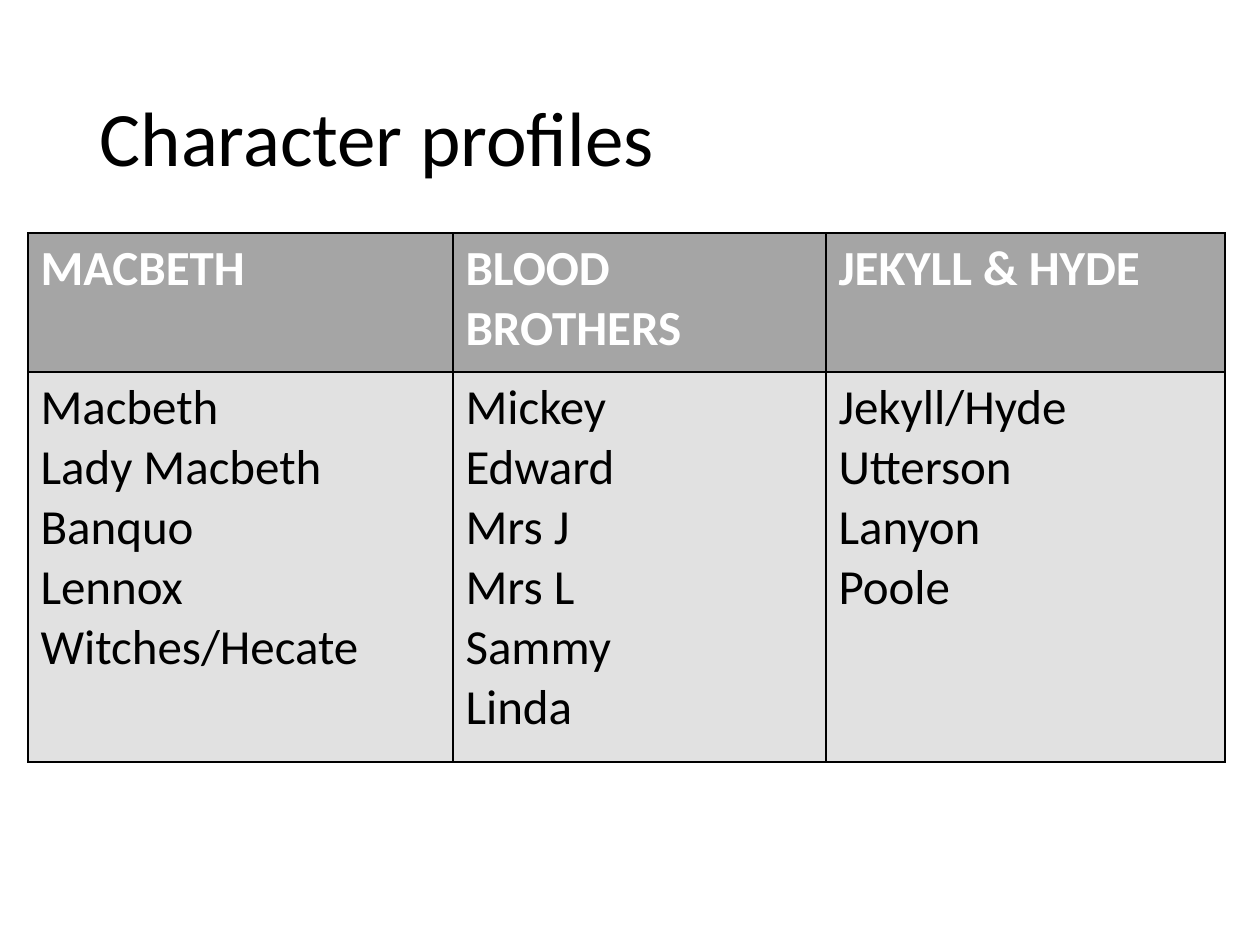
"""Build the character profiles slide."""
from dataclasses import dataclass

from lxml import etree
from pptx import Presentation
from pptx.dml.color import RGBColor
from pptx.enum.text import MSO_ANCHOR, PP_ALIGN
from pptx.oxml.ns import qn
from pptx.util import Pt

MIDDLE = MSO_ANCHOR.MIDDLE
LEFT = PP_ALIGN.LEFT


@dataclass(frozen=True)
class Theme:
    font: str = "Calibri"
    title_size: int = 44
    cell_size: int = 28
    ink: str = "000000"
    header_ink: str = "FFFFFF"
    header_fill: str = "A5A5A5"
    body_fill: str = "E1E1E1"
    border_width: int = 1


THEME = Theme()
PROFILES = {
    "MACBETH": ["Macbeth", "Lady Macbeth", "Banquo", "Lennox", "Witches/Hecate"],
    "BLOOD BROTHERS": ["Mickey", "Edward", "Mrs J", "Mrs L", "Sammy", "Linda"],
    "JEKYLL & HYDE": ["Jekyll/Hyde", "Utterson", "Lanyon", "Poole"],
}
COL_WIDTHS = [425, 373, 399]
ROW_HEIGHTS = [139, 390]


def px(n):
    return round(n * 914400 / 126)


def fill_cell(cell, lines, fill, ink, bold):
    cell.fill.solid()
    cell.fill.fore_color.rgb = RGBColor.from_string(fill)
    tf = cell.text_frame
    tf.text = "\n".join(lines)
    for p in tf.paragraphs:
        p.font.name = THEME.font
        p.font.size = Pt(THEME.cell_size)
        p.font.bold = bold
        p.font.color.rgb = RGBColor.from_string(ink)
    tc_pr = cell._tc.get_or_add_tcPr()
    for i, side in enumerate(("a:lnL", "a:lnR", "a:lnT", "a:lnB")):
        ln = etree.Element(qn(side), w=str(Pt(THEME.border_width)))
        solid = etree.SubElement(ln, qn("a:solidFill"))
        etree.SubElement(solid, qn("a:srgbClr"), val=THEME.ink)
        tc_pr.insert(i, ln)


prs = Presentation()
prs.slide_width, prs.slide_height = px(1260), px(945)
s = prs.slides.add_slide(prs.slide_layouts[5])

title = s.shapes.title
title.left, title.top, title.width, title.height = px(87), px(50), px(1086), px(183)
tf = title.text_frame
tf.text = "Character profiles"
tf.vertical_anchor = MIDDLE
p = tf.paragraphs[0]
p.alignment = LEFT
p.line_spacing = 0.9
p.font.name = THEME.font
p.font.size = Pt(THEME.title_size)
p.font.color.rgb = RGBColor.from_string(THEME.ink)

table = s.shapes.add_table(
    len(ROW_HEIGHTS), len(COL_WIDTHS),
    px(28), px(233), px(sum(COL_WIDTHS)), px(sum(ROW_HEIGHTS)),
).table
for row, height in zip(table.rows, ROW_HEIGHTS):
    row.height = px(height)
for c, (play, characters) in enumerate(PROFILES.items()):
    table.columns[c].width = px(COL_WIDTHS[c])
    fill_cell(table.cell(0, c), [play], THEME.header_fill, THEME.header_ink, True)
    fill_cell(table.cell(1, c), characters, THEME.body_fill, THEME.ink, False)

prs.save("out.pptx")
